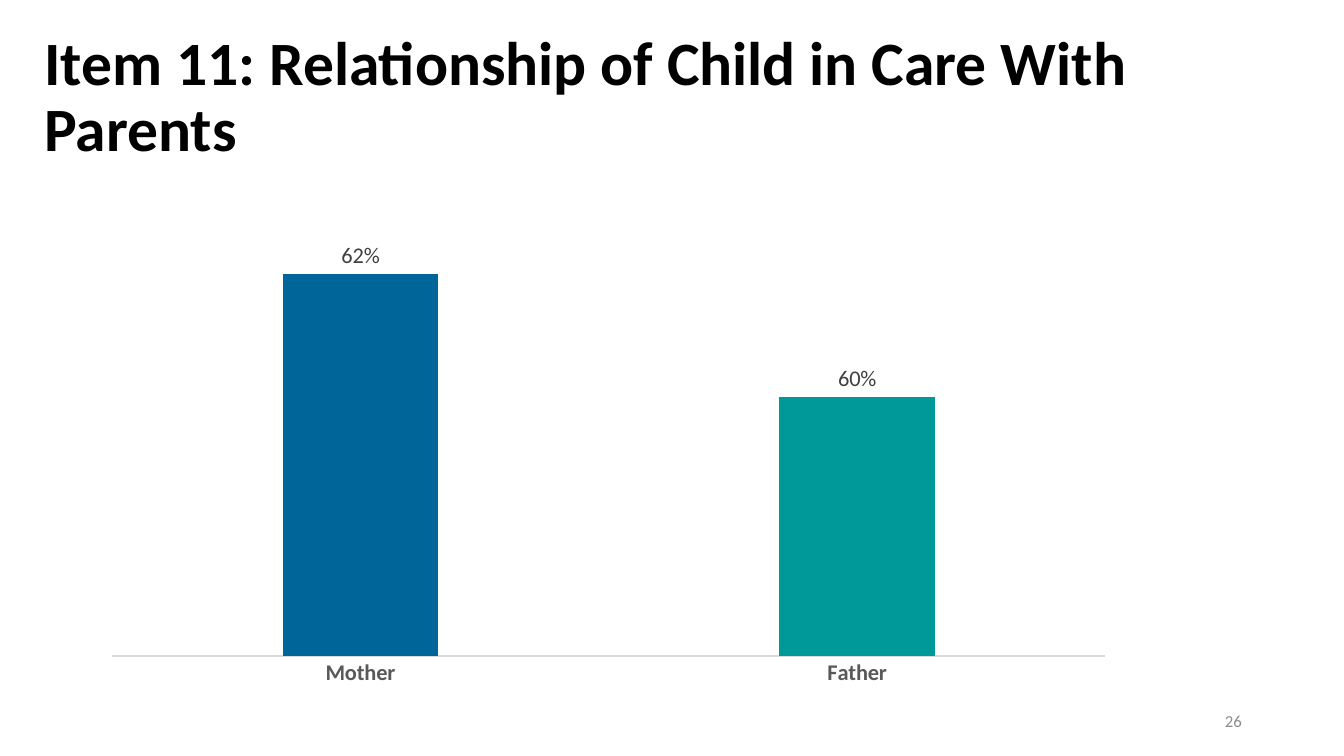
from dataclasses import dataclass

import lxml.etree
import pptx
import pptx.chart.chart
import pptx.chart.data
import pptx.chart.series
import pptx.dml.color
import pptx.enum.chart
import pptx.enum.text
import pptx.oxml.ns
import pptx.slide
import pptx.text.text
import pptx.util
from pptx.util import Cm


@dataclass(frozen=True)
class Theme:
    font: str = "Calibri"
    title_color: str = "000000"
    axis_text_color: str = "595959"
    axis_line_color: str = "D9D9D9"
    label_color: str = "404040"
    number_color: str = "8C8C8C"
    title_size: int = 44
    chart_size: int = 16
    number_size: int = 12


@dataclass(frozen=True)
class ParentBar:
    name: str
    value: float
    label: str
    color: str


THEME = Theme()
PARENT_BARS = [
    ParentBar("Mother", 0.62, "62%", "006699"),
    ParentBar("Father", 0.42, "60%", "009999"),
]
PLOT_AREA = {"x": 0.042, "y": 0.065, "w": 0.857, "h": 0.851}


def rgb(color: str) -> pptx.dml.color.RGBColor:
    return pptx.dml.color.RGBColor.from_string(color)


def format_font(font: pptx.text.text.Font, size: int, color: str, bold: bool = False) -> None:
    font.name = THEME.font
    font.size = pptx.util.Pt(size)
    font.bold = bold
    font.color.rgb = rgb(color)


def add_title(slide: pptx.slide.Slide, text: str) -> None:
    title = slide.shapes.title
    title.left, title.top, title.width, title.height = Cm(0.86), Cm(1.02), Cm(32.41), Cm(2.92)
    frame = title.text_frame
    frame.text = text
    frame.word_wrap = True
    frame.auto_size = pptx.enum.text.MSO_AUTO_SIZE.NONE
    frame.vertical_anchor = pptx.enum.text.MSO_ANCHOR.MIDDLE
    paragraph = frame.paragraphs[0]
    paragraph.alignment = pptx.enum.text.PP_ALIGN.LEFT
    paragraph.line_spacing = 0.9
    format_font(paragraph.runs[0].font, THEME.title_size, THEME.title_color, bold=True)


def place_plot_area(chart: pptx.chart.chart.Chart) -> None:
    """Fix the inner plot area as fractions of the chart."""
    qn = pptx.oxml.ns.qn
    plot_area = chart.plots[0]._element.getparent()
    for old_layout in plot_area.findall(qn("c:layout")):
        plot_area.remove(old_layout)
    layout = lxml.etree.Element(qn("c:layout"))
    manual = lxml.etree.SubElement(layout, qn("c:manualLayout"))
    settings = {"layoutTarget": "inner", "xMode": "edge", "yMode": "edge", **PLOT_AREA}
    for tag, value in settings.items():
        lxml.etree.SubElement(manual, qn(f"c:{tag}")).set("val", str(value))
    plot_area.insert(0, layout)


def format_axes(chart: pptx.chart.chart.Chart) -> None:
    value_axis = chart.value_axis
    value_axis.minimum_scale, value_axis.maximum_scale = 0, 0.8
    value_axis.has_major_gridlines = False
    value_axis.visible = False
    category_axis = chart.category_axis
    category_axis.major_tick_mark = pptx.enum.chart.XL_TICK_MARK.NONE
    category_axis.format.line.color.rgb = rgb(THEME.axis_line_color)
    category_axis.format.line.width = pptx.util.Pt(0.75)
    format_font(category_axis.tick_labels.font, THEME.chart_size, THEME.axis_text_color, bold=True)


def format_bars(series: pptx.chart.series.BarSeries) -> None:
    position = pptx.enum.chart.XL_LABEL_POSITION.OUTSIDE_END
    labels = series.data_labels
    labels.show_value = True
    labels.number_format, labels.number_format_is_linked = "0%", False
    labels.position = position
    format_font(labels.font, THEME.chart_size, THEME.label_color, bold=True)
    for index, bar in enumerate(PARENT_BARS):
        point = series.points[index]
        point.format.fill.solid()
        point.format.fill.fore_color.rgb = rgb(bar.color)
        frame = point.data_label.text_frame
        frame.text = bar.label
        format_font(frame.paragraphs[0].runs[0].font, THEME.chart_size, THEME.label_color)
        point.data_label.position = position


def add_parent_chart(slide: pptx.slide.Slide) -> None:
    data = pptx.chart.data.CategoryChartData(number_format="0%")
    data.categories = [bar.name for bar in PARENT_BARS]
    data.add_series("Series 1", [bar.value for bar in PARENT_BARS])
    chart = slide.shapes.add_chart(
        pptx.enum.chart.XL_CHART_TYPE.COLUMN_CLUSTERED,
        Cm(1.6), Cm(3.15), Cm(29.21), Cm(14.61), data,
    ).chart
    chart.has_title = False
    chart.has_legend = False
    format_font(chart.font, 10, THEME.title_color)
    plot = chart.plots[0]
    plot.vary_by_categories = False
    plot.gap_width, plot.overlap = 219, -27
    format_axes(chart)
    format_bars(plot.series[0])
    place_plot_area(chart)


def add_slide_number(slide: pptx.slide.Slide, number: str) -> None:
    frame = slide.shapes.add_textbox(Cm(23.93), Cm(17.65), Cm(7.62), Cm(1.02)).text_frame
    frame.text = number
    frame.word_wrap = True
    frame.vertical_anchor = pptx.enum.text.MSO_ANCHOR.MIDDLE
    paragraph = frame.paragraphs[0]
    paragraph.alignment = pptx.enum.text.PP_ALIGN.RIGHT
    format_font(paragraph.runs[0].font, THEME.number_size, THEME.number_color)


def main() -> None:
    presentation = pptx.Presentation()
    presentation.slide_width, presentation.slide_height = Cm(33.87), Cm(19.05)
    slide = presentation.slides.add_slide(presentation.slide_layouts[5])
    add_title(slide, "Item 11: Relationship of Child in Care With Parents")
    add_parent_chart(slide)
    add_slide_number(slide, "26")
    presentation.save("out.pptx")


if __name__ == "__main__":
    main()
